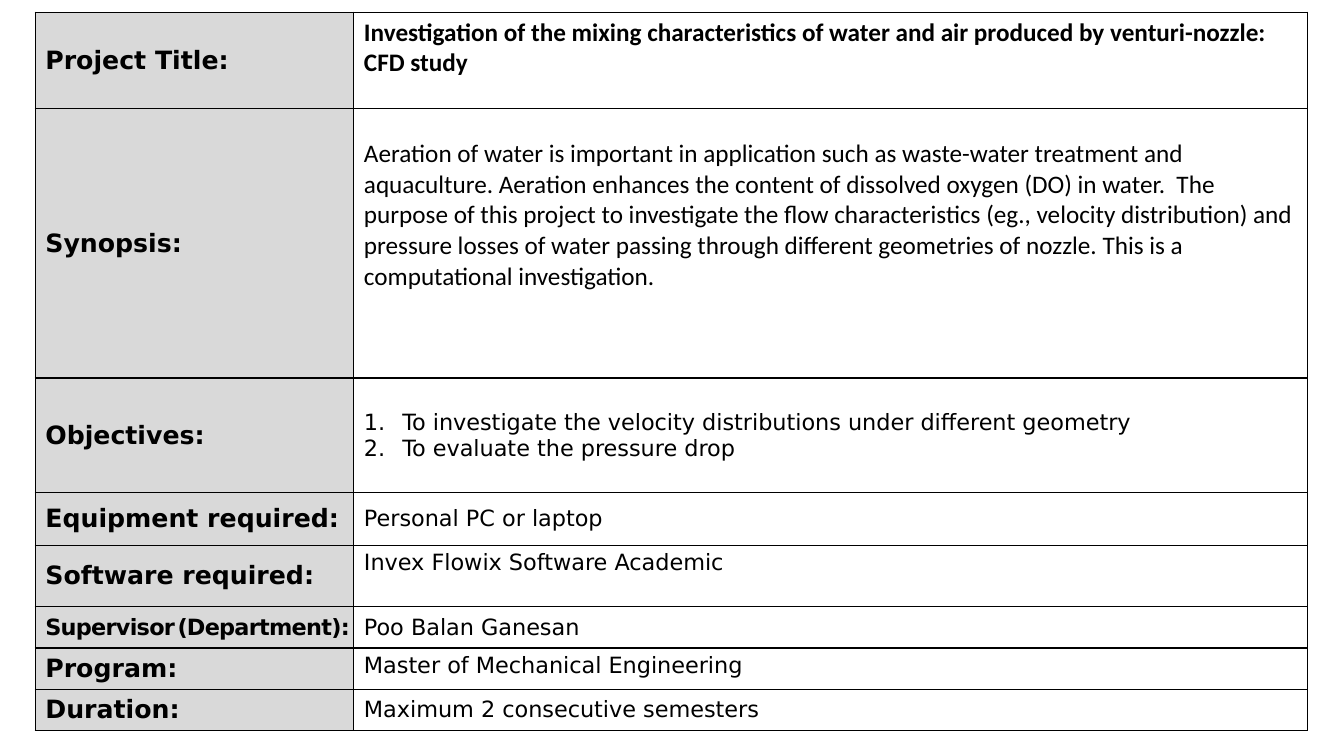
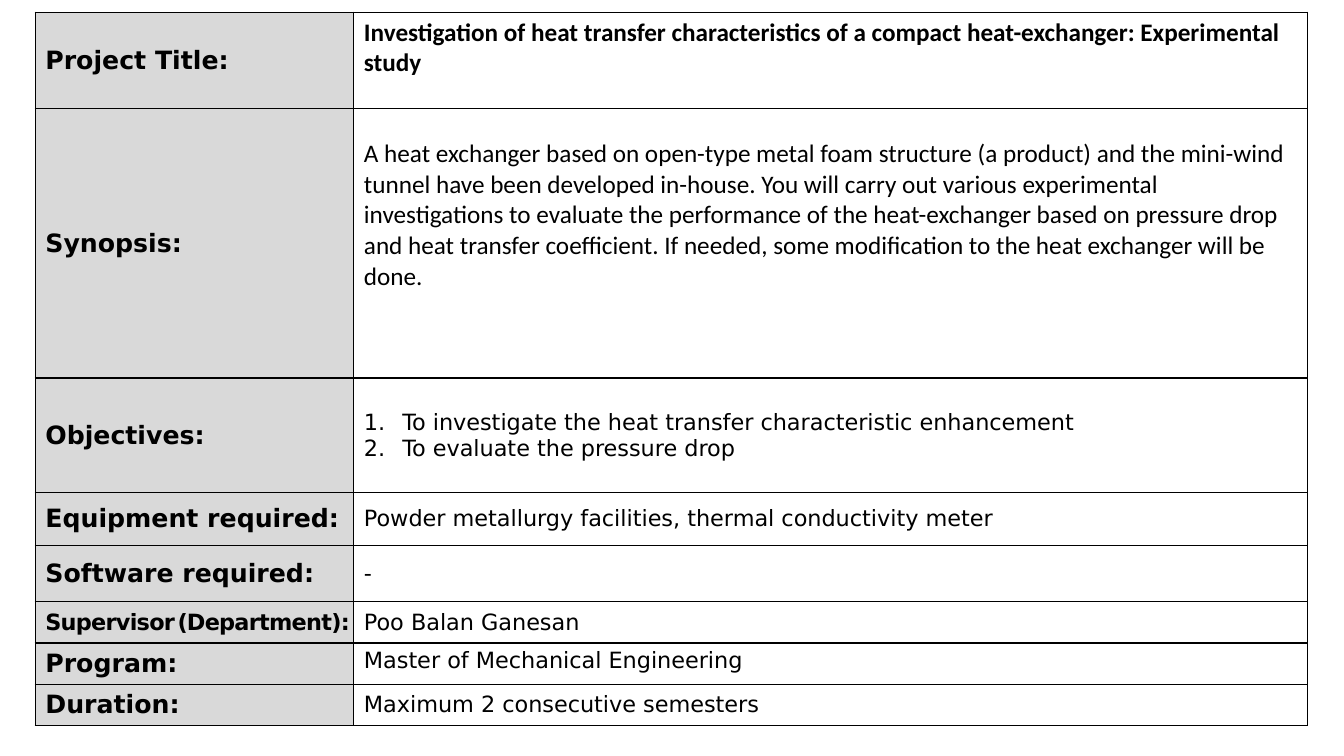
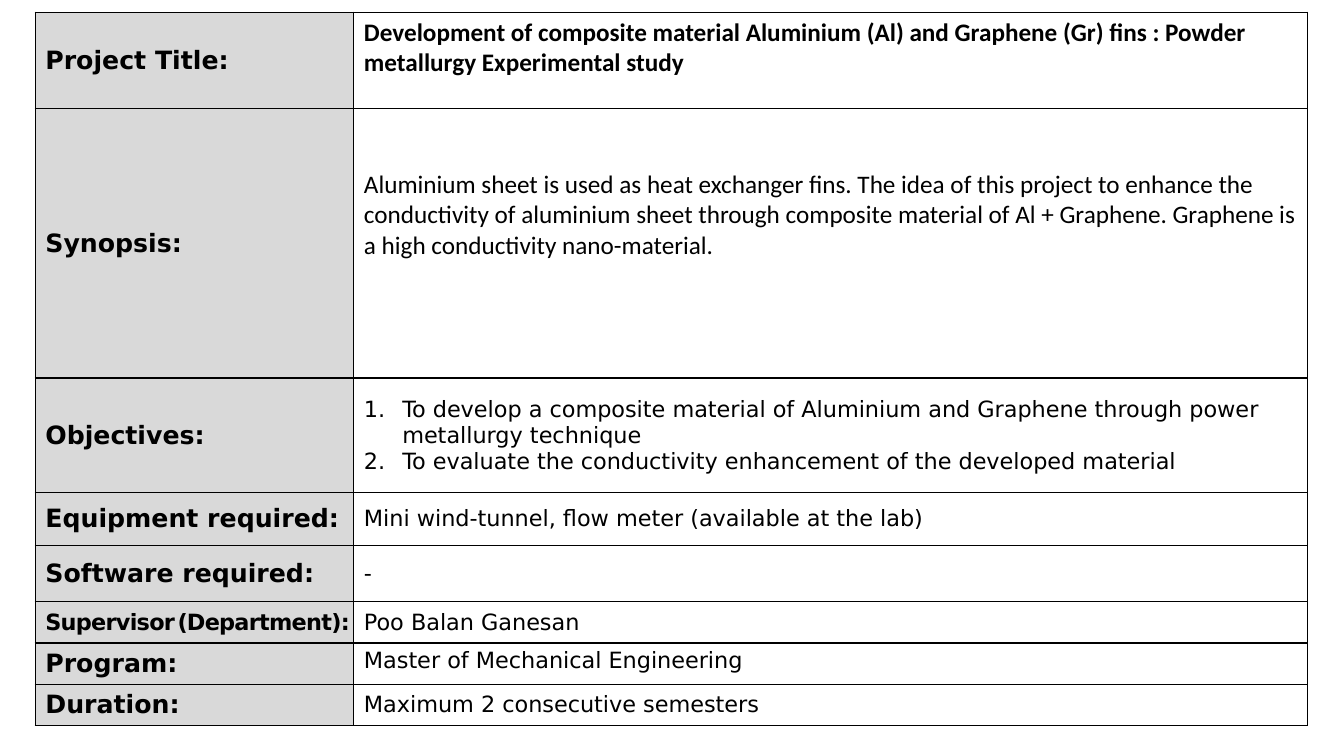
from dataclasses import dataclass

from lxml.etree import SubElement
from pptx import Presentation
from pptx.dml.color import RGBColor
from pptx.enum.text import MSO_ANCHOR as Anchor
from pptx.oxml.ns import qn
from pptx.slide import Slide
from pptx.table import _Cell as Cell
from pptx.util import Inches, Pt

COLORS = {"text": "000000", "border": "000000", "label": "D9D9D9"}
LABEL_FONT, PROSE_FONT = "DejaVu Sans", "Calibri"
COLUMN_WIDTHS = (3.16, 9.46)
TABLE_LEFT, TABLE_TOP = 0.35, 0.12


@dataclass(frozen=True)
class Piece:
    text: str
    size: float = 16
    bold: bool = False
    font: str = LABEL_FONT
    spacing: float = 0


@dataclass(frozen=True)
class Row:
    label: str
    height: float
    paragraphs: tuple[Piece, ...]
    anchor: Anchor = Anchor.MIDDLE
    bottom: float = 0.05
    numbered: bool = False


@dataclass(frozen=True)
class Project:
    title: str
    synopsis: str
    objectives: tuple[str, ...]
    equipment: str
    software: str = "-"
    software_height: float = 0.56
    software_anchor: Anchor = Anchor.MIDDLE


SUPERVISOR_LABEL = (
    Piece("Supervisor", bold=True, spacing=-0.5),
    Piece(" ", size=5, bold=True, spacing=-0.5),
    Piece("(Department):", bold=True, spacing=-0.5),
)

PROJECTS = (
    Project(
        "Investigation of the mixing characteristics of water and air produced by "
        "venturi-nozzle: CFD study",
        "Aeration of water is important in application such as waste-water treatment and "
        "aquaculture. Aeration enhances the content of dissolved oxygen (DO) in water.  The "
        "purpose of this project to investigate the flow characteristics (eg., velocity "
        "distribution) and pressure losses of water passing through different geometries of "
        "nozzle. This is a computational investigation.",
        ("To investigate the velocity distributions under different geometry",
         "To evaluate the pressure drop"),
        "Personal PC or laptop",
        "Invex Flowix Software Academic",
        0.61,
        Anchor.TOP,
    ),
    Project(
        "Investigation of heat transfer characteristics of a compact heat-exchanger: "
        "Experimental study",
        "A heat exchanger based on open-type metal foam structure (a product) and the mini-wind "
        "tunnel have been developed in-house. You will carry out various experimental "
        "investigations to evaluate the performance of the heat-exchanger based on pressure drop "
        "and heat transfer coefficient. If needed, some modification to the heat exchanger will "
        "be done.",
        ("To investigate the heat transfer characteristic enhancement",
         "To evaluate the pressure drop"),
        "Powder metallurgy facilities, thermal conductivity meter",
    ),
    Project(
        "Development of composite material Aluminium (Al) and Graphene (Gr) fins : Powder "
        "metallurgy Experimental study",
        "Aluminium sheet is used as heat exchanger fins. The idea of this project to enhance the "
        "conductivity of aluminium sheet through composite material of Al + Graphene. Graphene "
        "is a high conductivity nano-material.",
        ("To develop a composite material of Aluminium and Graphene through power metallurgy "
         "technique",
         "To evaluate the conductivity enhancement of the developed material"),
        "Mini wind-tunnel, flow meter (available at the lab)",
    ),
)


def project_rows(project: Project) -> list[Row]:
    title = Piece(project.title, 18, True, PROSE_FONT)
    synopsis = Piece(project.synopsis, 18, False, PROSE_FONT)
    objectives = tuple(Piece(objective) for objective in project.objectives)
    return [
        Row("Project Title:", 0.96, (title,), Anchor.TOP),
        Row("Synopsis:", 2.67, (synopsis,), bottom=0.61),
        Row("Objectives:", 1.14, objectives, numbered=True),
        Row("Equipment required:", 0.52, (Piece(project.equipment),)),
        Row("Software required:", project.software_height, (Piece(project.software),),
            project.software_anchor),
        Row("", 0.41, (Piece("Poo Balan Ganesan"),)),
        Row("Program:", 0.41, (Piece("Master of Mechanical Engineering"),), Anchor.TOP),
        Row("Duration:", 0.41, (Piece("Maximum 2 consecutive semesters"),)),
    ]


def add_piece(paragraph, piece: Piece) -> None:
    run = paragraph.add_run()
    run.text = piece.text
    run.font.size = Pt(piece.size)
    run.font.bold = piece.bold
    run.font.name = piece.font
    run.font.color.rgb = RGBColor.from_string(COLORS["text"])
    if piece.spacing:
        run.font._element.set("spc", str(round(piece.spacing * 100)))


def number_paragraph(paragraph) -> None:
    properties = paragraph._p.get_or_add_pPr()
    properties.set("marL", str(Inches(0.38)))
    properties.set("indent", str(-Inches(0.38)))
    SubElement(properties, qn("a:buFont"), typeface="+mj-lt")
    SubElement(properties, qn("a:buAutoNum"), type="arabicPeriod")


def add_borders(cell: Cell) -> None:
    properties = cell._tc.get_or_add_tcPr()
    for side in ("lnL", "lnR", "lnT", "lnB"):
        line = SubElement(properties, qn(f"a:{side}"), w=str(Pt(1)))
        fill = SubElement(line, qn("a:solidFill"))
        SubElement(fill, qn("a:srgbClr"), val=COLORS["border"])


def fill_label(cell: Cell, label: str) -> None:
    add_borders(cell)
    cell.fill.solid()
    cell.fill.fore_color.rgb = RGBColor.from_string(COLORS["label"])
    cell.vertical_anchor = Anchor.MIDDLE
    if not label:
        cell.margin_right = Inches(0)
    pieces = (Piece(label, 18, True),) if label else SUPERVISOR_LABEL
    for piece in pieces:
        add_piece(cell.text_frame.paragraphs[0], piece)


def fill_value(cell: Cell, row: Row) -> None:
    add_borders(cell)
    cell.fill.background()
    cell.vertical_anchor = row.anchor
    cell.margin_bottom = Inches(row.bottom)
    frame = cell.text_frame
    for index, piece in enumerate(row.paragraphs):
        paragraph = frame.add_paragraph() if index else frame.paragraphs[0]
        if row.numbered:
            number_paragraph(paragraph)
        add_piece(paragraph, piece)


def add_project_table(slide: Slide, project: Project) -> None:
    rows = project_rows(project)
    table = slide.shapes.add_table(
        len(rows), len(COLUMN_WIDTHS), Inches(TABLE_LEFT), Inches(TABLE_TOP),
        Inches(sum(COLUMN_WIDTHS)), Inches(sum(row.height for row in rows)),
    ).table
    table.first_row = False
    table.horz_banding = False
    for column, width in zip(table.columns, COLUMN_WIDTHS):
        column.width = Inches(width)
    for index, row in enumerate(rows):
        table.rows[index].height = Inches(row.height)
        fill_label(table.cell(index, 0), row.label)
        fill_value(table.cell(index, 1), row)


def main() -> None:
    deck = Presentation()
    deck.slide_width, deck.slide_height = Inches(13.33), Inches(7.5)
    blank = deck.slide_layouts[6]
    for project in PROJECTS:
        add_project_table(deck.slides.add_slide(blank), project)
    deck.save("out.pptx")


if __name__ == "__main__":
    main()
